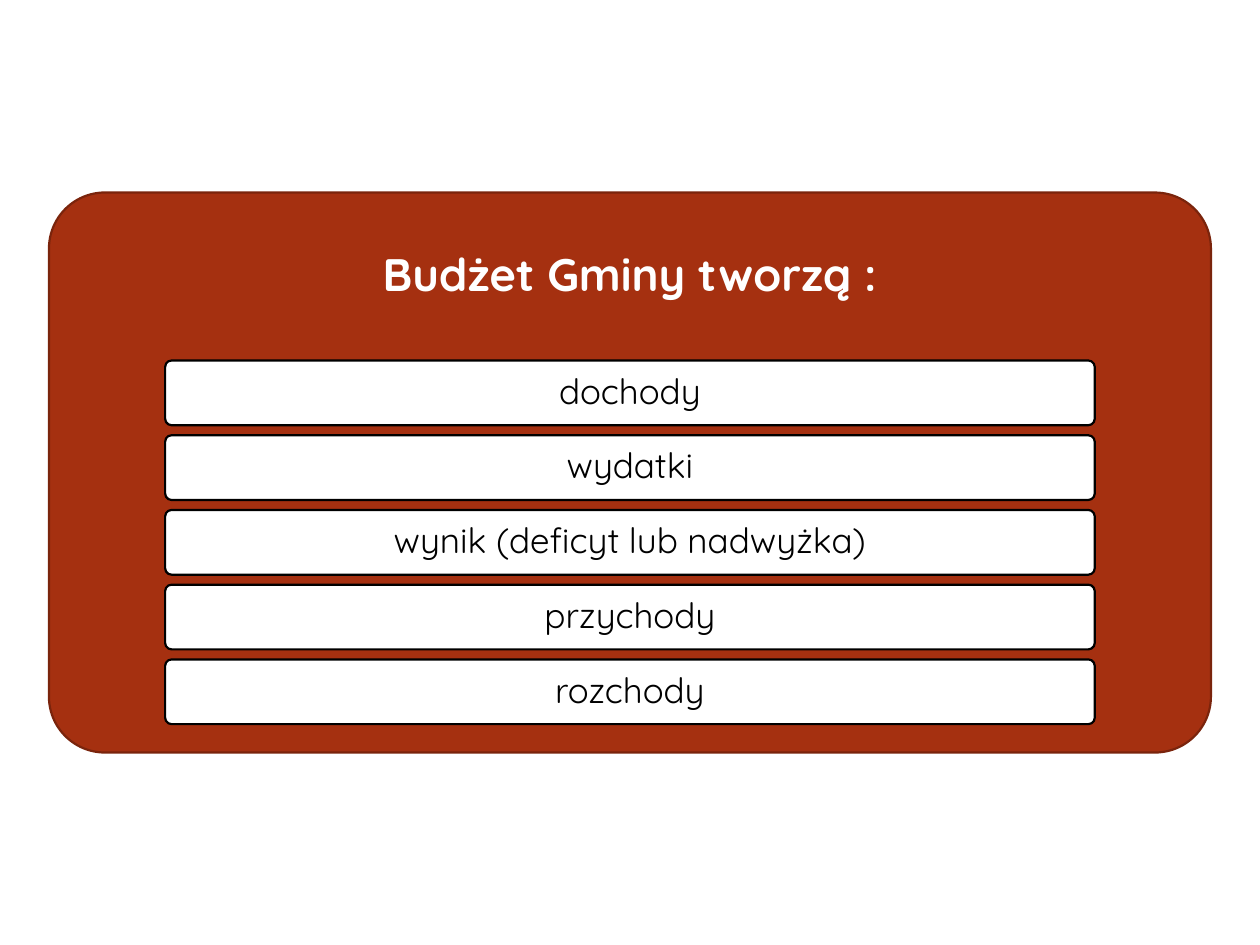
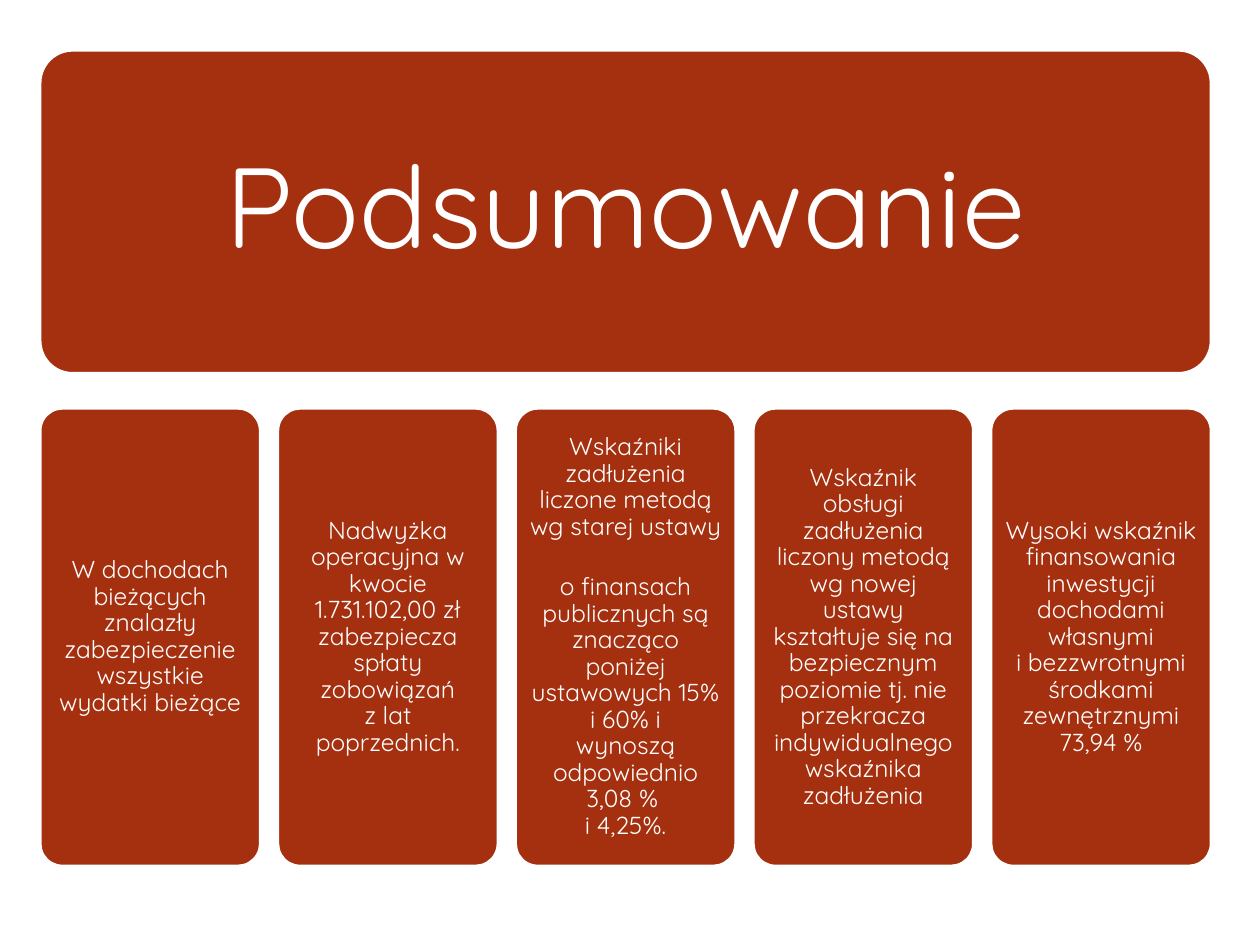
from pptx import Presentation
from pptx.dml.color import RGBColor
from pptx.enum.shapes import MSO_SHAPE
from pptx.enum.text import MSO_ANCHOR, MSO_AUTO_SIZE, PP_ALIGN
from pptx.util import Pt

ROUNDED = MSO_SHAPE.ROUNDED_RECTANGLE
MIDDLE = MSO_ANCHOR.MIDDLE
CENTER = PP_ALIGN.CENTER
NO_AUTOFIT = MSO_AUTO_SIZE.NONE

FONT = "Quicksand"
RUST = "A53010"
DARK_RUST = "7A240C"
WHITE = "FFFFFF"
BLACK = "000000"
TITLE_ONLY = 5


def write(shape, text, size, color=WHITE, bold=False, inset_x=4.3, inset_y=4.3):
    frame = shape.text_frame
    frame.word_wrap = True
    frame.auto_size = NO_AUTOFIT
    frame.vertical_anchor = MIDDLE
    frame.margin_left = frame.margin_right = Pt(inset_x)
    frame.margin_top = frame.margin_bottom = Pt(inset_y)
    frame.text = text
    paragraph = frame.paragraphs[0]
    paragraph.alignment = CENTER
    paragraph.line_spacing = 0.9
    paragraph.space_before = Pt(0)
    for run in paragraph.runs:
        run.font.name = FONT
        run.font.size = Pt(size)
        run.font.bold = bold
        run.font.color.rgb = RGBColor.from_string(color)


def add_card(slide, left, top, width, height, fill, outline):
    card = slide.shapes.add_shape(ROUNDED, Pt(left), Pt(top), Pt(width), Pt(height))
    card.adjustments[0] = 0.1
    card.shadow.inherit = False
    card.fill.solid()
    card.fill.fore_color.rgb = RGBColor.from_string(fill)
    card.line.color.rgb = RGBColor.from_string(outline)
    card.line.width = Pt(1.25)
    return card


prs = Presentation()
prs.slide_width, prs.slide_height = Pt(720), Pt(540)

headings = [
    {
        "text": "Budżet Gminy tworzą :", "size": 26, "bold": True, "inset": 8,
        "panel": (28, 110, 664, 320), "outline": DARK_RUST,
        "place": (28, 110, 664, 96),
    },
    {
        "text": "Podsumowanie", "size": 65, "bold": False, "inset": 19.5,
        "panel": (23.1, 28.9, 668.8, 184.3), "outline": WHITE,
        "place": (28.4, 34.2, 658.2, 173.7),
    },
]
slides = []
for heading in headings:
    slide = prs.slides.add_slide(prs.slide_layouts[TITLE_ONLY])
    panel = add_card(slide, *heading["panel"], RUST, heading["outline"])
    title = slide.shapes.title
    title.element.addprevious(panel.element)
    title.left, title.top, title.width, title.height = map(Pt, heading["place"])
    write(title, heading["text"], heading["size"], bold=heading["bold"],
          inset_x=heading["inset"], inset_y=heading["inset"])
    slides.append(slide)
budget_slide, summary_slide = slides

budget_parts = ["dochody", "wydatki", "wynik (deficyt lub nadwyżka)", "przychody", "rozchody"]
bar_top, bar_pitch = 206, 42.7
for index, part in enumerate(budget_parts):
    bar = add_card(budget_slide, 94.4, bar_top + index * bar_pitch, 531.2, 37, WHITE, BLACK)
    write(bar, part, 20, color=BLACK, inset_y=2.9)

conclusions = [
    "W dochodach bieżących znalazły zabezpieczenie wszystkie wydatki bieżące",
    "Nadwyżka operacyjna w kwocie 1.731.102,00 zł zabezpiecza spłaty "
    "zobowiązań\vz lat poprzednich.",
    "Wskaźniki zadłużenia liczone metodą wg starej ustawy \vo finansach publicznych "
    "są znacząco poniżej ustawowych 15% i 60% i\vwynoszą odpowiednio 3,08 % \vi 4,25%.",
    "Wskaźnik obsługi zadłużenia liczony metodą wg nowej ustawy kształtuje się na "
    "bezpiecznym poziomie tj. nie przekracza indywidualnego wskaźnika zadłużenia",
    "Wysoki wskaźnik finansowania inwestycji dochodami własnymi\vi bezzwrotnymi "
    "środkami zewnętrznymi 73,94 %",
]
band_left, _, band_width, _ = headings[1]["panel"]
gap = 10.4
column_width = (band_width - gap * (len(conclusions) - 1)) / len(conclusions)
for index, conclusion in enumerate(conclusions):
    left = band_left + index * (column_width + gap)
    column = add_card(summary_slide, left, 233.5, column_width, 261.2, RUST, WHITE)
    write(column, conclusion, 14)

prs.save("out.pptx")
